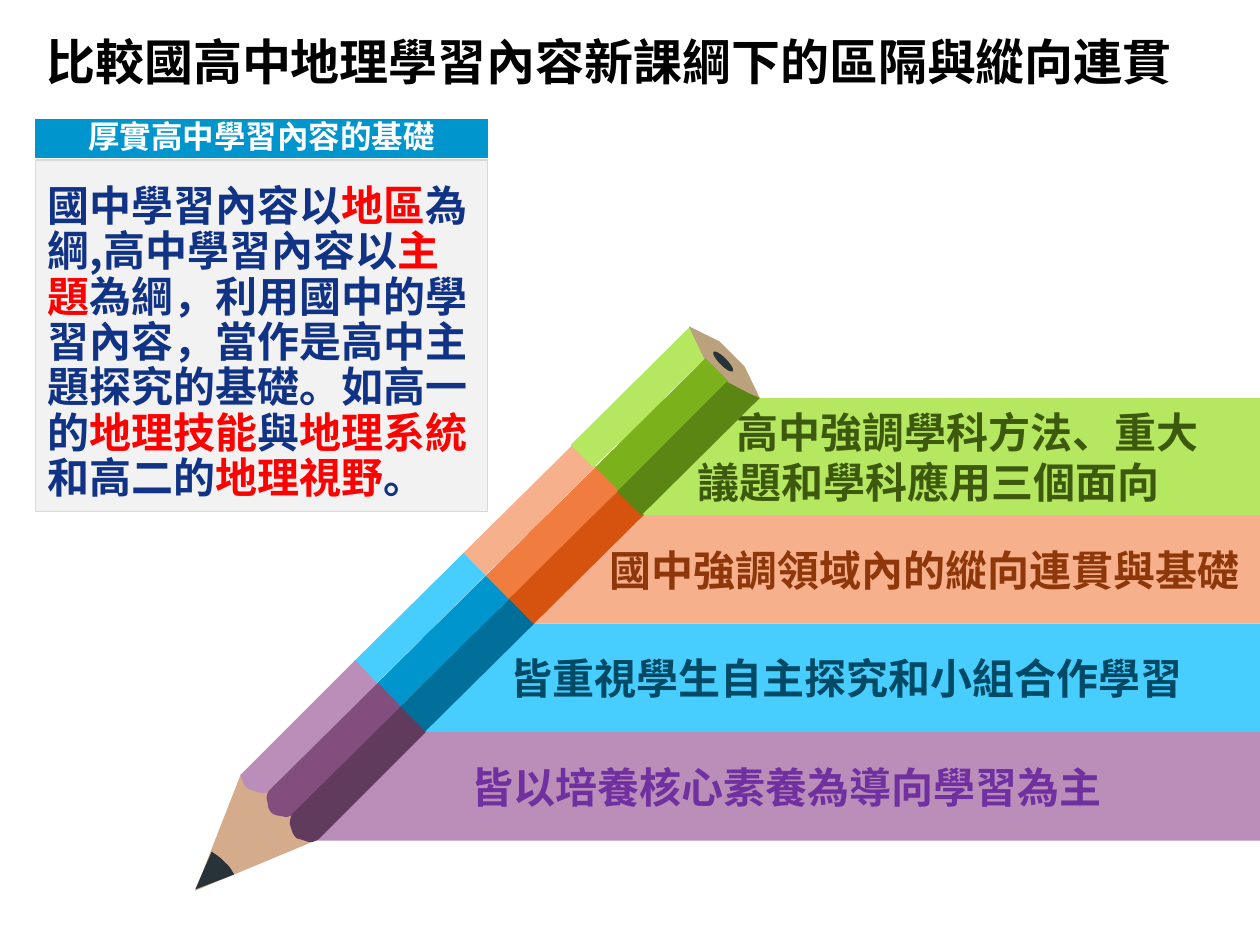
"""Build the slide comparing junior and senior high geography content."""
import math

from lxml import etree
from pptx import Presentation, util as u
from pptx.dml.color import RGBColor
from pptx.enum import shapes, text
from pptx.oxml.ns import qn

COLORS = {
    "black": "000000", "white": "FFFFFF", "navy": "113386", "red": "FF0000",
    "panel": "F2F2F2", "border": "D9D9D9", "wood": "D4AC8C", "lead": "273339",
    "end": "BBA17C",
    "blue light": "48CDFF", "blue": "0095CD", "blue dark": "00709A", "blue text": "004A66",
    "orange light": "F7B08C", "orange": "F17C3F", "orange dark": "D5530F", "orange text": "8E370A",
    "green light": "B6E760", "green": "7BB21B", "green dark": "5C8614", "green text": "3D590D",
    "purple light": "BA8EB8", "purple": "814E7E", "purple dark": "613B5E", "purple text": "7030A0",
}
CJK = "Noto Sans CJK SC"
TILT = -44.7
LEFT, CENTER = text.PP_ALIGN.LEFT, text.PP_ALIGN.CENTER
RECTANGLE, OVAL = shapes.MSO_SHAPE.RECTANGLE, shapes.MSO_SHAPE.OVAL

BANDS = [
    ("blue", 241.2, 356.4, 62, CENTER, [("皆重視學生自主探究和小組合作學習", 6)]),
    ("orange", 302.4, 294.4, 62, CENTER, [("國中強調領域內的縱向連貫與基礎", 34)]),
    ("green", 353.5, 227.5, 67, LEFT, [("高中強調學科方法、重大", 60), ("議題和學科應用三個面向", 38)]),
    ("purple", 178.6, 418.4, 62, CENTER, [("皆以培養核心素養為導向學習為主", 0)]),
]
POINT_AND_END = [
    ("wood", [(180.7, 480.2), (111.6, 509), (137.5, 442.8), (149.8, 431.3), (189.4, 471.6)]),
    ("lead", [(128.9, 493.2), (126.7, 490.3, 123.1, 488.2, 121, 486.7), (111.6, 508.3),
              (133.9, 499.7), (132.5, 497.5, 131, 494.6, 128.9, 493.2)]),
    ("end", [(395.3, 205.2), (393.8, 186.5), (411.1, 195.1), (425.5, 209.5), (434.2, 227.5),
             (415.4, 225.4)]),
]
SHAPED_STRIPS = [
    ("green light", [(326.2, 254.2), (393.8, 187.2), (402.5, 205.2), (339.1, 267.1)]),
    ("purple light", [(137.5, 442.8), (203, 377.3), (216, 391), (154.1, 452.2),
                      (152.6, 452.9, 150.5, 453.6, 148.3, 452.9), (144, 451.4),
                      (141.8, 451.4, 139.7, 449.3, 139, 447.1), (138.2, 445)]),
    ("purple", [(216, 390.2), (154.1, 451.4), (152.6, 452.9, 151.9, 455.8, 152.6, 457.2),
                (153.4, 461.5), (154.1, 463.7, 155.5, 465.1, 157.7, 465.8), (162, 466.6),
                (163.4, 467.3, 166.3, 466.6, 167.8, 465.1), (229, 403.9)]),
    ("purple dark", [(167, 465.1), (229, 403.9), (243.4, 418.3), (182.2, 479.5),
                     (180, 481, 177.8, 481.7, 175.7, 481), (171.4, 479.5),
                     (169.2, 479.5, 167.8, 477.4, 167, 475.2), (165.6, 470.9),
                     (165.6, 468.7, 166.3, 466.6, 167, 465.1)]),
    ("green dark", [(352.8, 280.8), (415.4, 218.2), (427.7, 224.6), (434.2, 227.5),
                    (366.5, 294.5)]),
]
STRIPS = [(" light", 195.8, 344.2, 18), ("", 208.8, 357.1, 18.7), (" dark", 222.5, 370.1, 20.2)]
SEGMENT_STEP = (62.6, -62)
SUMMARY = [
    ("國中學習內容以", "navy"), ("地區", "red"), ("為綱,高中學習內容以", "navy"), ("主題", "red"),
    ("為綱，利用國中的學習內容，當作是高中主題探究的基礎。如高一的", "navy"), ("地理技能", "red"),
    ("與", "navy"), ("地理系統", "red"), ("和高二的", "navy"), ("地理視野", "red"), ("。", "navy"),
]


def turn(point, degrees):
    x, y = point
    cos, sin = math.cos(math.radians(degrees)), math.sin(math.radians(degrees))
    return x * cos - y * sin, x * sin + y * cos


def flatten(outline, steps=6):
    points = []
    for part in outline:
        if len(part) == 2:
            points.append(part)
            continue
        controls = [points[-1], part[:2], part[2:4], part[4:]]
        for step in range(1, steps + 1):
            t = step / steps
            weights = [math.comb(3, i) * t**i * (1 - t)**(3 - i) for i in range(4)]
            points.append(tuple(sum(w * c[axis] for w, c in zip(weights, controls))
                                for axis in (0, 1)))
    return points


class SlideBuilder:
    def __init__(self, slide):
        self.slide = slide
        self.pencil = None

    def color(self, name):
        return RGBColor.from_string(COLORS[name])

    def paint(self, shape, fill, line=None):
        shape.shadow.inherit = False
        shape.fill.solid()
        shape.fill.fore_color.rgb = self.color(fill)
        if line:
            shape.line.color.rgb = self.color(line)
            shape.line.width = u.Pt(0.75)
        else:
            shape.line.fill.background()
        return shape

    def box(self, left, top, width, height, fill, line=None):
        shape = self.slide.shapes.add_shape(RECTANGLE, *map(u.Pt, (left, top, width, height)))
        return self.paint(shape, fill, line)

    def title(self, left, top, width, height, words):
        shape = self.slide.shapes.add_textbox(*map(u.Pt, (left, top, width, height)))
        self.add_text(shape, [([(words, "black")], 0)], 28, "Arial", LEFT, text.MSO_ANCHOR.TOP)

    def add_text(self, shape, paragraphs, size, font, align, anchor, margins=None, spacing=None):
        frame = shape.text_frame
        frame.word_wrap = True
        frame.vertical_anchor = anchor
        if margins:
            (frame.margin_left, frame.margin_top,
             frame.margin_right, frame.margin_bottom) = map(u.Pt, margins)
        for index, (runs, indent) in enumerate(paragraphs):
            paragraph = frame.add_paragraph() if index else frame.paragraphs[0]
            paragraph.alignment = align
            if spacing:
                paragraph.line_spacing = spacing
            if indent:
                paragraph._p.get_or_add_pPr().set("marL", str(u.Pt(indent)))
            for words, color in runs:
                run = paragraph.add_run()
                run.text = words
                run.font.size, run.font.bold, run.font.name = u.Pt(size), True, font
                run.font.color.rgb = self.color(color)
                east_asian = etree.Element(qn("a:ea"), typeface=CJK)
                run.font._element.find(qn("a:latin")).addnext(east_asian)

    def start_pencil(self):
        self.pencil = self.slide.shapes.add_group_shape().shapes

    def tilted(self, kind, left, top, width, height, fill):
        shape = self.pencil.add_shape(kind, *map(u.Pt, (left, top, width, height)))
        shape.rotation = TILT
        self.paint(shape, fill)

    def tilted_outline(self, outline, fill):
        level = [turn(point, -TILT) for point in flatten(outline)]
        center = [(min(axis) + max(axis)) / 2 for axis in zip(*level)]
        shift_x, shift_y = (new - old for new, old in zip(turn(center, TILT), center))
        points = [(u.Pt(x + shift_x), u.Pt(y + shift_y)) for x, y in level]
        builder = self.pencil.build_freeform(*points[0])
        builder.add_line_segments(points[1:], close=True)
        shape = builder.convert_to_shape()
        shape.rotation = TILT
        self.paint(shape, fill)


def main():
    presentation = Presentation()
    presentation.slide_width, presentation.slide_height = u.Pt(720), u.Pt(540)
    builder = SlideBuilder(presentation.slides.add_slide(presentation.slide_layouts[6]))
    middle, top_anchor = text.MSO_ANCHOR.MIDDLE, text.MSO_ANCHOR.TOP

    builder.title(19.4, 14.4, 707, 75, "比較國高中地理學習內容新課綱下的區隔與縱向連貫")
    for hue, left, top, height, align, lines in BANDS:
        band = builder.box(left, top, 720 - left, height, f"{hue} light")
        paragraphs = [([(words, f"{hue} text")], indent) for words, indent in lines]
        builder.add_text(band, paragraphs, 24, CJK, align, middle)

    builder.start_pencil()
    for fill, outline in POINT_AND_END:
        builder.tilted_outline(outline, fill)
    for index, hue in enumerate(("blue", "orange", "green")):
        for shade, left, top, height in STRIPS:
            if hue != "green" or not shade:
                builder.tilted(RECTANGLE, left + index * SEGMENT_STEP[0],
                               top + index * SEGMENT_STEP[1], 88.6, height, hue + shade)
    builder.tilted(OVAL, 411.1, 198.7, 4.3, 15.8, "lead")
    for fill, outline in SHAPED_STRIPS:
        builder.tilted_outline(outline, fill)

    panel = builder.box(20.2, 91.4, 258.5, 200.9, "panel", "border")
    builder.add_text(panel, [(SUMMARY, 0)], 24, CJK, LEFT, top_anchor, (7.2, 14.4, 7.2, 3.6), 0.9)
    header = builder.box(20.2, 68.4, 258.5, 21.6, "blue", "blue")
    builder.add_text(header, [([("厚實高中學習內容的基礎", "white")], 0)], 18, "Calibri",
                     CENTER, middle, (0, 0, 0, 0), 0.9)
    presentation.save("out.pptx")


if __name__ == "__main__":
    main()
